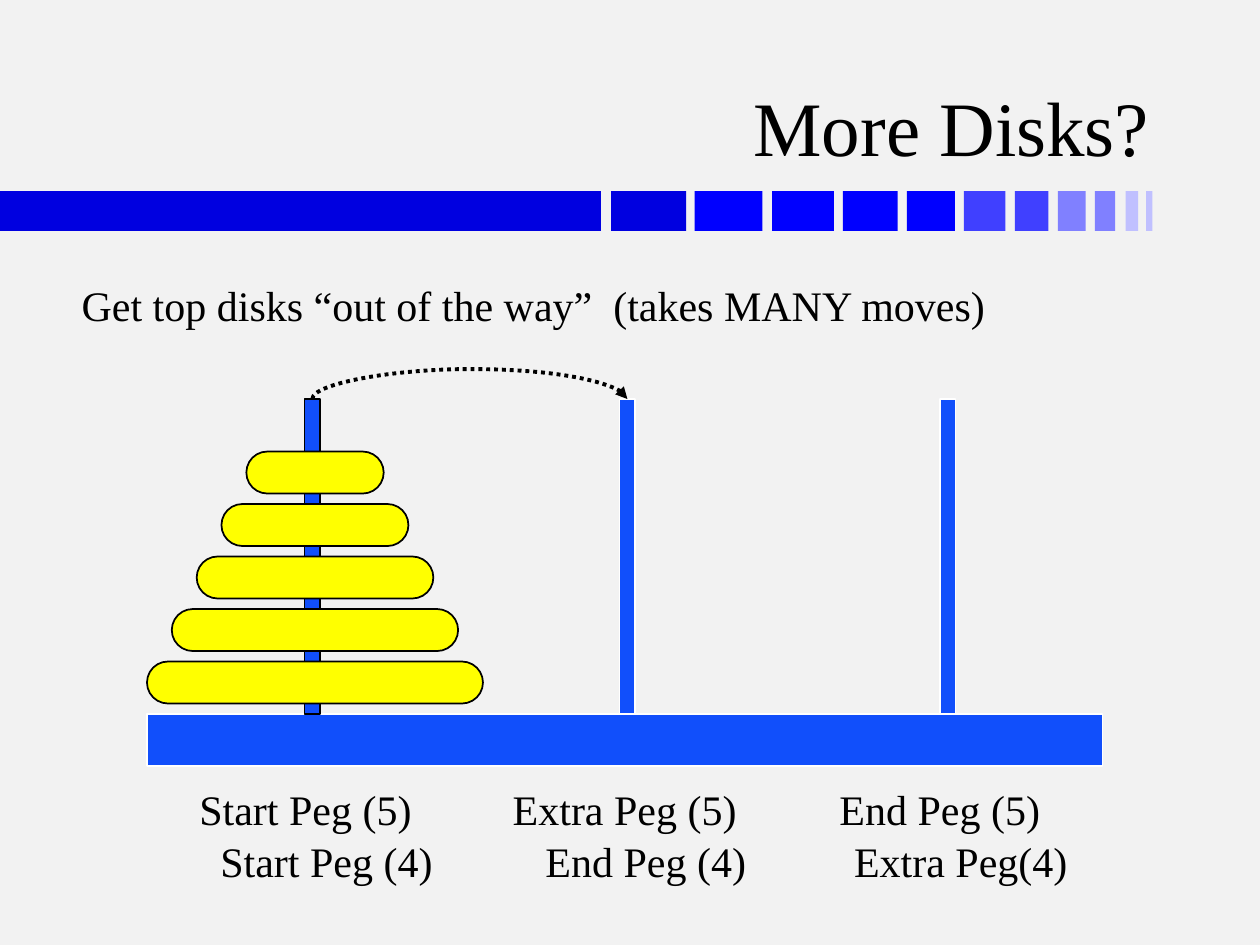
from lxml.etree import SubElement
from pptx import Presentation
from pptx.dml.color import RGBColor
from pptx.enum.dml import MSO_LINE
from pptx.enum.shapes import MSO_CONNECTOR, MSO_SHAPE
from pptx.enum.text import MSO_ANCHOR, PP_ALIGN
from pptx.oxml.ns import qn
from pptx.util import Inches, Pt

BACKGROUND = RGBColor(0xF2, 0xF2, 0xF2)
BLACK = RGBColor(0, 0, 0)
WHITE = RGBColor(0xFF, 0xFF, 0xFF)
YELLOW = RGBColor(0xFF, 0xFF, 0)
PEG_BLUE = RGBColor(0x11, 0x4F, 0xFB)
NAVY = RGBColor(0, 0, 0xE0)
BLUE = RGBColor(0, 0, 0xFF)
MID_BLUE = RGBColor(0x40, 0x40, 0xFF)
SOFT_BLUE = RGBColor(0x80, 0x80, 0xFF)
PALE_BLUE = RGBColor(0xC0, 0xC0, 0xFF)

BAND = [
    (0, 57.24, NAVY), (58.2, 7.15, NAVY), (66.15, 5.85 + 0.62, BLUE),
    (73.53, 5.88, BLUE), (80.28, 5.2, BLUE), (86.37, 4.58, BLUE),
    (91.8, 3.96, MID_BLUE), (96.65, 3.2, MID_BLUE), (100.75, 2.65, SOFT_BLUE),
    (104.28, 1.92, SOFT_BLUE), (107.2, 1.2, PALE_BLUE), (109.15, 0.6, PALE_BLUE),
]
PEGS = [(29.75, BLACK), (59.75, WHITE), (90.25, WHITE)]
LABEL_ROWS = [
    (74, [(29.1, "Start Peg (5)"), (59.5, "Extra Peg (5)"), (89.5, "End Peg (5)")]),
    (79, [(31.1, "Start Peg (4)"), (61.5, "End Peg (4)"), (91.5, "Extra Peg(4)")]),
]


class SlideBuilder:
    """Draws styled elements on a slide grid of 120 columns by 90 rows."""

    font_name = "Times New Roman"
    columns = 120
    rows = 90

    def __init__(self, presentation):
        self.column = presentation.slide_width / self.columns
        self.row = presentation.slide_height / self.rows
        self.slide = presentation.slides.add_slide(presentation.slide_layouts[6])
        fill = self.slide.background.fill
        fill.solid()
        fill.fore_color.rgb = BACKGROUND

    def place(self, left, top, width, height):
        return (round(left * self.column), round(top * self.row),
                round(width * self.column), round(height * self.row))

    def block(self, box, color, outline=None, kind=MSO_SHAPE.RECTANGLE):
        shape = self.slide.shapes.add_shape(kind, *self.place(*box))
        shape.shadow.inherit = False
        shape.fill.solid()
        shape.fill.fore_color.rgb = color
        if outline is None:
            shape.line.fill.background()
        else:
            shape.line.color.rgb = outline
            shape.line.width = Pt(1)
        return shape

    def disk(self, box):
        shape = self.block(box, YELLOW, BLACK, MSO_SHAPE.ROUNDED_RECTANGLE)
        shape.adjustments[0] = 0.5

    def text(self, box, words, size=24, align=PP_ALIGN.LEFT,
             anchor=MSO_ANCHOR.TOP, wrap=False):
        frame = self.slide.shapes.add_textbox(*self.place(*box)).text_frame
        frame.word_wrap = wrap
        frame.vertical_anchor = anchor
        paragraph = frame.paragraphs[0]
        paragraph.alignment = align
        run = paragraph.add_run()
        run.text = words
        run.font.name = self.font_name
        run.font.size = Pt(size)
        run.font.color.rgb = BLACK

    def arch(self, start, end, top, rise):
        middle, half = (start + end) / 2, (end - start) / 2
        thickness = 0.02
        left, upper, right, lower = self.place(
            middle, top - half, middle + thickness, top + half)
        connector = self.slide.shapes.add_connector(
            MSO_CONNECTOR.CURVE, left, lower, right, upper)
        connector.line.color.rgb = BLACK
        connector.line.width = Pt(2.25)
        connector.line.dash_style = MSO_LINE.ROUND_DOT
        properties = connector._element.spPr
        properties.find(qn("a:xfrm")).set("rot", "5400000")
        guides = properties.find(qn("a:prstGeom")).get_or_add_avLst()
        bend = -round(rise / thickness * 100000)
        SubElement(guides, qn("a:gd"), name="adj1", fmla=f"val {bend}")
        SubElement(properties.find(qn("a:ln")), qn("a:tailEnd"), type="triangle")
        SubElement(properties, qn("a:effectLst"))


def main():
    presentation = Presentation()
    presentation.slide_width = Inches(10)
    presentation.slide_height = Inches(7.5)
    builder = SlideBuilder(presentation)

    for left, width, color in BAND:
        builder.block((left, 18.2, width, 3.8), color)
    builder.text((8.9, 2.25, 101.75, 14.75), "More Disks?", 44,
                 PP_ALIGN.RIGHT, MSO_ANCHOR.BOTTOM, True)

    builder.block((14, 68, 91, 5), PEG_BLUE, WHITE)
    for center, outline in PEGS:
        builder.block((center - 0.75, 38, 1.5, 30), PEG_BLUE, outline)
    for level in range(5):
        width = 32 - 4.73 * level
        builder.disk((30 - width / 2, 63 - 5 * level, width, 4))

    for top, labels in LABEL_ROWS:
        for center, words in labels:
            builder.text((center - 12, top, 24, 6), words, align=PP_ALIGN.CENTER)
    builder.arch(PEGS[0][0], PEGS[1][0], 38, 3)
    builder.text((6.6, 26, 89.3, 6.1),
                 "Get top disks “out of the way”  (takes MANY moves)")
    presentation.save("out.pptx")


if __name__ == "__main__":
    main()
